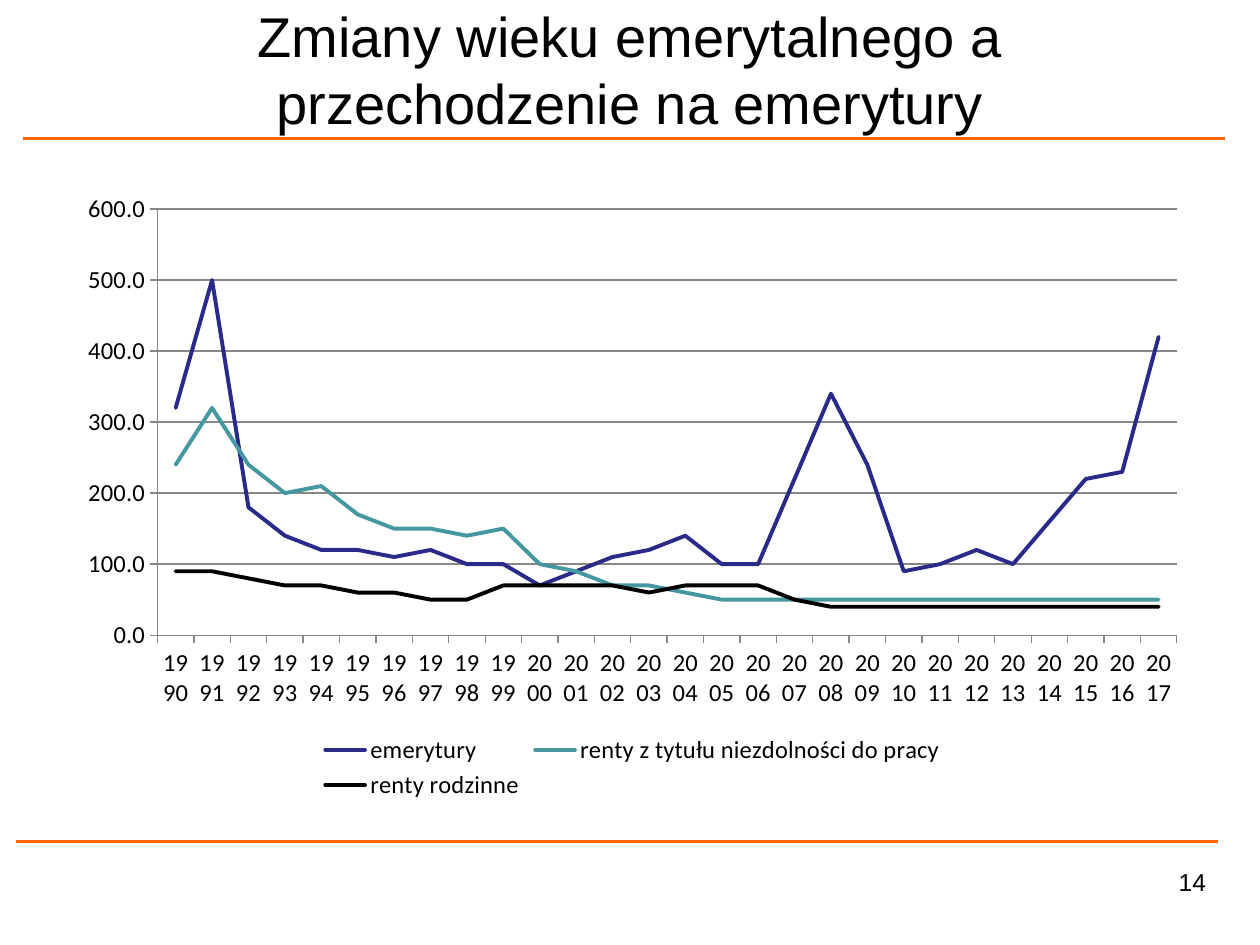
from dataclasses import dataclass

from lxml.etree import SubElement
from pptx import Presentation
from pptx.chart.data import CategoryChartData
from pptx.dml.color import RGBColor
from pptx.enum.chart import XL_CHART_TYPE as ChartType
from pptx.enum.chart import XL_LEGEND_POSITION as LegendPosition
from pptx.enum.chart import XL_TICK_MARK as TickMark
from pptx.enum.shapes import MSO_CONNECTOR as Connector
from pptx.enum.text import MSO_ANCHOR as Anchor
from pptx.enum.text import MSO_AUTO_SIZE as AutoSize
from pptx.enum.text import PP_ALIGN as Align
from pptx.oxml.ns import qn
from pptx.util import Inches, Pt


@dataclass(frozen=True)
class Theme:
    """Colours, fonts and type sizes of the deck."""
    ink: RGBColor = RGBColor.from_string("000000")
    rule: RGBColor = RGBColor.from_string("FF6600")
    axis: RGBColor = RGBColor.from_string("888888")
    pensions: RGBColor = RGBColor.from_string("2A2A89")
    disability: RGBColor = RGBColor.from_string("4597A0")
    text_font: str = "Arial"
    chart_font: str = "Calibri"
    title_size: Pt = Pt(32)
    body_size: Pt = Pt(14)


THEME = Theme()
YEARS = [str(year) for year in range(1990, 2018)]
SERIES = [
    ("emerytury", THEME.pensions,
     [320, 500, 180, 140, 120, 120, 110, 120, 100, 100, 70, 90, 110, 120,
      140, 100, 100, 220, 340, 240, 90, 100, 120, 100, 160, 220, 230, 420]),
    ("renty z tytułu niezdolności do pracy", THEME.disability,
     [240, 320, 240, 200, 210, 170, 150, 150, 140, 150, 100, 90, 70, 70, 60]
     + [50] * 13),
    ("renty rodzinne", THEME.ink,
     [90, 90, 80, 70, 70, 60, 60, 50, 50, 70, 70, 70, 70, 60, 70, 70, 70, 50]
     + [40] * 10),
]


def apply(target, **values):
    """Set each named format value on the target."""
    for name, value in values.items():
        setattr(target, name, value)


def style_font(font, name, size):
    """Give a font its face, size and the ink colour."""
    apply(font, name=name, size=size, bold=False)
    font.color.rgb = THEME.ink


def style_line(line, color, width):
    """Give a line its colour and width."""
    line.color.rgb = color
    line.width = width


def write_text(shape, text, size, align, anchor):
    """Write one wrapped paragraph into a shape."""
    frame = shape.text_frame
    apply(frame, word_wrap=True, auto_size=AutoSize.NONE, vertical_anchor=anchor)
    para = frame.paragraphs[0]
    para.alignment = align
    span = para.add_run()
    span.text = text
    style_font(span.font, THEME.text_font, size)


def add_rule(page, left, top, width):
    """Draw a horizontal orange rule."""
    rule = page.shapes.add_connector(
        Connector.STRAIGHT, left, top, left + width, top)
    style_line(rule.line, THEME.rule, Pt(1.5))
    SubElement(rule._element.spPr, qn("a:effectLst"))


def place_title(page, text, left, top, width, height):
    """Move the title placeholder into its box and fill it."""
    title = page.shapes.title
    apply(title, left=left, top=top, width=width, height=height)
    write_text(title, text, THEME.title_size, Align.CENTER, Anchor.MIDDLE)


def add_page_number(page, text, left, top, width, height):
    """Write the page number at the right of its box."""
    box = page.shapes.add_textbox(left, top, width, height)
    write_text(box, text, THEME.body_size, Align.RIGHT, Anchor.TOP)


def keep_labels_level(axis):
    """Fix axis labels at no rotation, so that they wrap."""
    body = axis._element.find(qn("c:txPr")).find(qn("a:bodyPr"))
    body.set("rot", "0")
    body.set("vert", "horz")


def add_benefit_chart(page, left, top, width, height):
    """Plot the yearly benefit series as lines."""
    data = CategoryChartData(number_format="0.0")
    data.categories = YEARS
    for name, _, values in SERIES:
        data.add_series(name, values)
    chart = page.shapes.add_chart(
        ChartType.LINE, left, top, width, height, data).chart
    apply(chart, has_title=False, has_legend=True)
    apply(chart.legend, position=LegendPosition.BOTTOM, include_in_layout=False)
    chart.plots[0].vary_by_categories = False
    for series, (_, color, _) in zip(chart.plots[0].series, SERIES):
        series.smooth = False
        style_line(series.format.line, color, Pt(2.25))
        series._element.spPr.find(qn("a:ln")).set("cap", "rnd")
    for axis in (chart.category_axis, chart.value_axis):
        apply(axis, major_tick_mark=TickMark.OUTSIDE, minor_tick_mark=TickMark.NONE)
        style_line(axis.format.line, THEME.axis, Pt(0.75))
    apply(chart.value_axis, minimum_scale=0, maximum_scale=600, major_unit=100)
    apply(chart.value_axis.tick_labels, number_format="0.0",
          number_format_is_linked=False)
    style_line(chart.value_axis.major_gridlines.format.line, THEME.axis, Pt(0.75))
    for part in (chart, chart.legend, chart.category_axis.tick_labels,
                 chart.value_axis.tick_labels):
        style_font(part.font, THEME.chart_font, THEME.body_size)
    keep_labels_level(chart.category_axis)


def build_chart_slide(deck):
    """Lay out the title, rules, chart and page number."""
    page = deck.slides.add_slide(deck.slide_layouts[5])
    add_rule(page, Inches(0.18), Inches(1.1), Inches(9.54))
    add_rule(page, Inches(0.13), Inches(6.68), Inches(9.54))
    place_title(page, "Zmiany wieku emerytalnego a przechodzenie na emerytury",
                Inches(0.5), Inches(0.3), Inches(9), Inches(0.49))
    add_page_number(page, "14", Inches(7.34), Inches(6.83),
                    Inches(2.33), Inches(0.52))
    add_benefit_chart(page, Inches(0.52), Inches(1.44), Inches(9), Inches(4.95))


def main():
    """Build and save the deck."""
    deck = Presentation()
    apply(deck, slide_width=Inches(10), slide_height=Inches(7.5))
    build_chart_slide(deck)
    deck.save("out.pptx")


if __name__ == "__main__":
    main()
